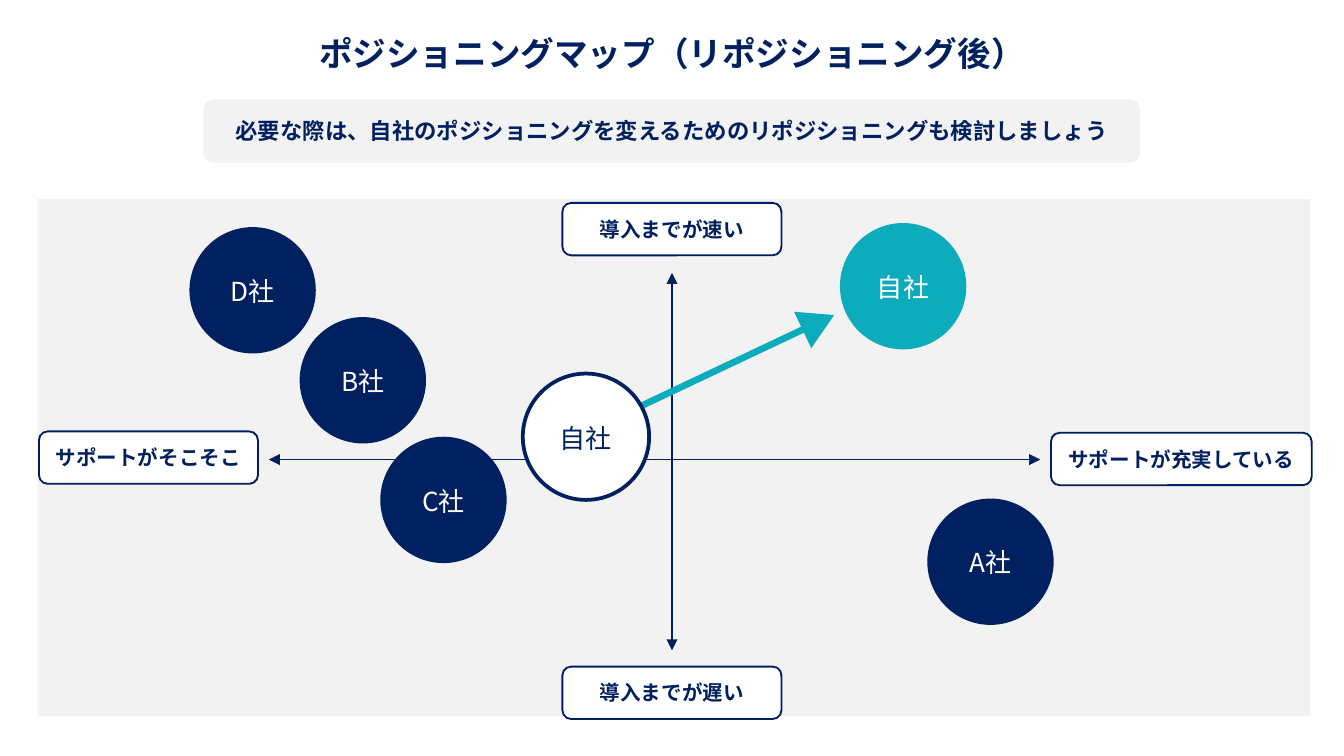
"""Positioning map slide showing the company's move after repositioning."""
from pptx import Presentation
from pptx.dml.color import RGBColor
from pptx.enum.shapes import MSO_CONNECTOR, MSO_SHAPE
from pptx.enum.text import MSO_ANCHOR, MSO_AUTO_SIZE, PP_ALIGN
from pptx.oxml.ns import qn
from pptx.util import Inches, Pt
from lxml import etree

RECT, ROUND = MSO_SHAPE.RECTANGLE, MSO_SHAPE.ROUNDED_RECTANGLE
OVAL, TRIANGLE = MSO_SHAPE.OVAL, MSO_SHAPE.ISOSCELES_TRIANGLE
STRAIGHT = MSO_CONNECTOR.STRAIGHT
CENTER, MIDDLE = PP_ALIGN.CENTER, MSO_ANCHOR.MIDDLE
GROW = MSO_AUTO_SIZE.SHAPE_TO_FIT_TEXT
FONT = "Noto Sans CJK JP"
COLORS = {"navy": "002060", "border": "011F60", "teal": "0DACBD", "gray": "F2F2F2", "white": "FFFFFF"}
C = {name: RGBColor.from_string(value) for name, value in COLORS.items()}

prs = Presentation()
prs.slide_width = Inches(10)
prs.slide_height = prs.slide_width * 9 // 16
s = prs.slides.add_slide(prs.slide_layouts[6])
CELL = prs.slide_width / 100
DISC, LABEL_H = 9.4, 3.4


def add_box(kind, at, fill, line=None, width=1, rotation=0):
    sp = s.shapes.add_shape(kind, *(round(v * CELL) for v in at))
    sp.shadow.inherit = False
    sp.rotation = rotation
    sp.fill.solid()
    sp.fill.fore_color.rgb = C[fill]
    if line:
        sp.line.color.rgb, sp.line.width = C[line], Pt(width)
    else:
        sp.line.fill.background()
    return sp


def add_text(text, size, color, bold=False, at=None, sp=None):
    if sp is None:
        sp = s.shapes.add_textbox(*(round(v * CELL) for v in at))
        sp.text_frame.auto_size = GROW
    else:
        sp.text_frame.vertical_anchor = MIDDLE
    sp.text_frame.word_wrap = True
    p = sp.text_frame.paragraphs[0]
    p.alignment = CENTER
    r = p.add_run()
    r.text = text
    for name, value in {"name": FONT, "size": Pt(size), "bold": bold}.items():
        setattr(r.font, name, value)
    r.font.color.rgb = C[color]
    etree.SubElement(r.font._element, qn("a:ea"), typeface=FONT)


add_box(RECT, (2.8, 14.8, 94.7, 38.5), "gray")
add_text("ポジショニングマップ（リポジショニング後）", 18, "navy", True, (22.5, 1.95, 55, 4))
add_box(ROUND, (15.13, 7.4, 69.7, 4.7), "gray")
add_text("必要な際は、自社のポジショニングを変えるためのリポジショニングも検討しましょう",
         12, "navy", True, (16.15, 8.2, 67.7, 3))

for ends in [(20, 34.2, 77.4, 34.2), (50, 48.4, 50, 20.3)]:
    axis = s.shapes.add_connector(STRAIGHT, *(round(v * CELL) for v in ends))
    axis.line.color.rgb, axis.line.width = C["navy"], Pt(0.75)
    for end in ("a:headEnd", "a:tailEnd"):
        etree.SubElement(axis.line._get_or_add_ln(), qn(end), type="triangle")
    etree.SubElement(axis._element.spPr, qn("a:effectLst"))

add_box(RECT, (42.1, 28, 19.5, 0.5), "teal", rotation=334.7)
add_box(TRIANGLE, (59.4, 22.7, 3, 2.6), "teal", rotation=64.7)

for name, x, y, fill, line, color, label_w in [
    ("D社", 14.1, 16.9, "navy", None, "white", 5.4),
    ("B社", 22.3, 23.6, "navy", None, "white", 5.4),
    ("C社", 28.3, 32.5, "navy", None, "white", 5.4),
    ("A社", 69, 37.1, "navy", None, "white", 5.3),
    ("自社", 62.5, 16.6, "teal", None, "white", 5.9),
    ("自社", 38.9, 27.8, "white", "navy", "navy", 5.9),
]:
    add_box(OVAL, (x, y, DISC, DISC), fill, line, 2)
    add_text(name, 14, color, at=(x + (DISC - label_w) / 2, y + 3.1, label_w, LABEL_H))

for text, x, y, w in [
    ("導入までが速い", 41.85, 15.1, 16.3),
    ("導入までが遅い", 41.85, 49.6, 16.3),
    ("サポートがそこそこ", 2.9, 32.1, 16.3),
    ("サポートが充実している", 78.2, 32.2, 19.4),
]:
    add_text(text, 11, "navy", True, sp=add_box(ROUND, (x, y, w, 3.9), "white", "border"))

prs.save("out.pptx")
